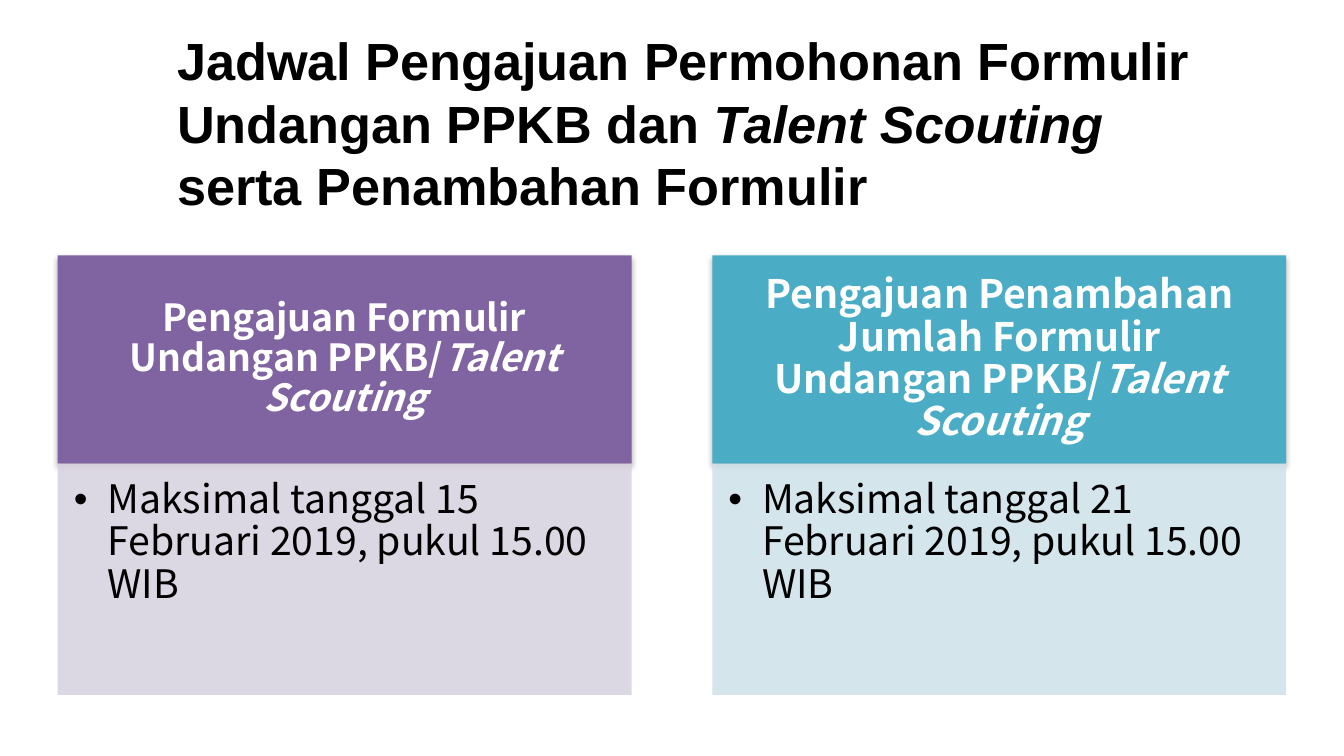
from dataclasses import dataclass

from lxml import etree
from pptx import Presentation
from pptx.dml.color import RGBColor
from pptx.enum import shapes, text
from pptx.oxml import ns
from pptx.util import Inches, Pt


@dataclass(frozen=True)
class Theme:
    title_font: str = "Arial"
    body_font: str = "Noto Sans CJK KR"
    black: str = "000000"
    white: str = "FFFFFF"
    title_size: float = 28
    body_size: float = 21


@dataclass(frozen=True)
class Card:
    heading: str
    heading_size: float
    deadline: str
    strong: str
    pale: str


THEME = Theme()
PROGRAM = "Talent Scouting"
CARDS = [
    Card("Pengajuan Formulir Undangan PPKB/", 20,
         "Maksimal tanggal 15 Februari 2019, pukul 15.00 WIB", "8064A2", "D8D3E0"),
    Card("Pengajuan Penambahan Jumlah Formulir Undangan PPKB/", 21,
         "Maksimal tanggal 21 Februari 2019, pukul 15.00 WIB", "4BACC6", "D0E3EA"),
]
PAGE_WIDTH = 10
PAGE_HEIGHT = PAGE_WIDTH * 9 / 16
LEFT, TOP, WIDTH, STEP = 0.43, 1.9, 4.27, 4.87
HEADING_HEIGHT, BODY_HEIGHT = 1.55, 1.72


def add_element(parent, tag: str, **attributes):
    return etree.SubElement(parent, ns.qn(tag), attributes)


def add_span(para, wording: str, *, font: str, size: float, color: str,
             bold: bool = False, italic: bool = False) -> None:
    span = para.add_run()
    span.text = wording
    span.font.name = font
    span.font.size = Pt(size)
    span.font.bold = bold
    span.font.italic = italic
    span.font.color.rgb = RGBColor.from_string(color)
    # The same face serves East Asian and complex scripts
    for tag in ("a:ea", "a:cs"):
        add_element(span.font._element, tag, typeface=font)


def set_frame(box, anchor, insets: tuple) -> None:
    frame = box.text_frame
    frame.word_wrap = True
    frame.vertical_anchor = anchor
    (frame.margin_left, frame.margin_top,
     frame.margin_right, frame.margin_bottom) = map(Inches, insets)


def add_panel(page, left: float, top: float, height: float, color: str):
    box = page.shapes.add_shape(shapes.MSO_SHAPE.RECTANGLE, Inches(left),
                                Inches(top), Inches(WIDTH), Inches(height))
    box.shadow.inherit = False
    box.fill.solid()
    box.fill.fore_color.rgb = RGBColor.from_string(color)
    box.line.fill.background()
    return box


def add_shadow(box) -> None:
    effects = box._element.spPr.find(ns.qn("a:effectLst"))
    shadow = add_element(effects, "a:outerShdw", blurRad=str(Pt(3.1)),
                         dist=str(Pt(1.8)), dir="5400000", rotWithShape="0")
    tint = add_element(shadow, "a:srgbClr", val=THEME.black)
    add_element(tint, "a:alpha", val="35000")


def add_bullet(para) -> None:
    properties = para._p.get_or_add_pPr()
    properties.set("marL", str(Inches(0.25)))
    properties.set("indent", str(Inches(-0.25)))
    add_element(properties, "a:buFont", typeface=THEME.title_font)
    add_element(properties, "a:buChar", char="•")


def add_title(page) -> None:
    box = page.shapes.add_textbox(Inches(1.22), Inches(0.27), Inches(8.11), Inches(1.28))
    set_frame(box, text.MSO_ANCHOR.MIDDLE, (0.1, 0.05, 0.1, 0.05))
    para = box.text_frame.paragraphs[0]
    style = dict(font=THEME.title_font, size=THEME.title_size, color=THEME.black, bold=True)
    add_span(para, "Jadwal Pengajuan Permohonan Formulir Undangan PPKB dan ", **style)
    add_span(para, PROGRAM + " ", italic=True, **style)
    para.add_line_break()
    add_span(para, "serta Penambahan Formulir", **style)


def add_card(page, card: Card, left: float) -> None:
    heading = add_panel(page, left, TOP, HEADING_HEIGHT, card.strong)
    add_shadow(heading)
    set_frame(heading, text.MSO_ANCHOR.MIDDLE, (0.18, 0.09, 0.18, 0.09))
    para = heading.text_frame.paragraphs[0]
    para.alignment = text.PP_ALIGN.CENTER
    para.line_spacing = 0.9
    style = dict(font=THEME.body_font, size=card.heading_size, color=THEME.white, bold=True)
    add_span(para, card.heading, **style)
    add_span(para, PROGRAM, italic=True, **style)

    body = add_panel(page, left, TOP + HEADING_HEIGHT, BODY_HEIGHT, card.pale)
    fill_color = body._element.spPr.find(ns.qn("a:solidFill"))[0]
    add_element(fill_color, "a:alpha", val="90000")
    set_frame(body, text.MSO_ANCHOR.TOP, (0.12, 0.12, 0.16, 0.18))
    para = body.text_frame.paragraphs[0]
    para.alignment = text.PP_ALIGN.LEFT
    para.line_spacing = 0.9
    add_bullet(para)
    add_span(para, card.deadline, font=THEME.body_font, size=THEME.body_size,
             color=THEME.black)


def main() -> None:
    deck = Presentation()
    deck.slide_width, deck.slide_height = Inches(PAGE_WIDTH), Inches(PAGE_HEIGHT)
    page = deck.slides.add_slide(deck.slide_layouts[6])
    add_title(page)
    for index, card in enumerate(CARDS):
        add_card(page, card, LEFT + index * STEP)
    deck.save("out.pptx")


if __name__ == "__main__":
    main()
